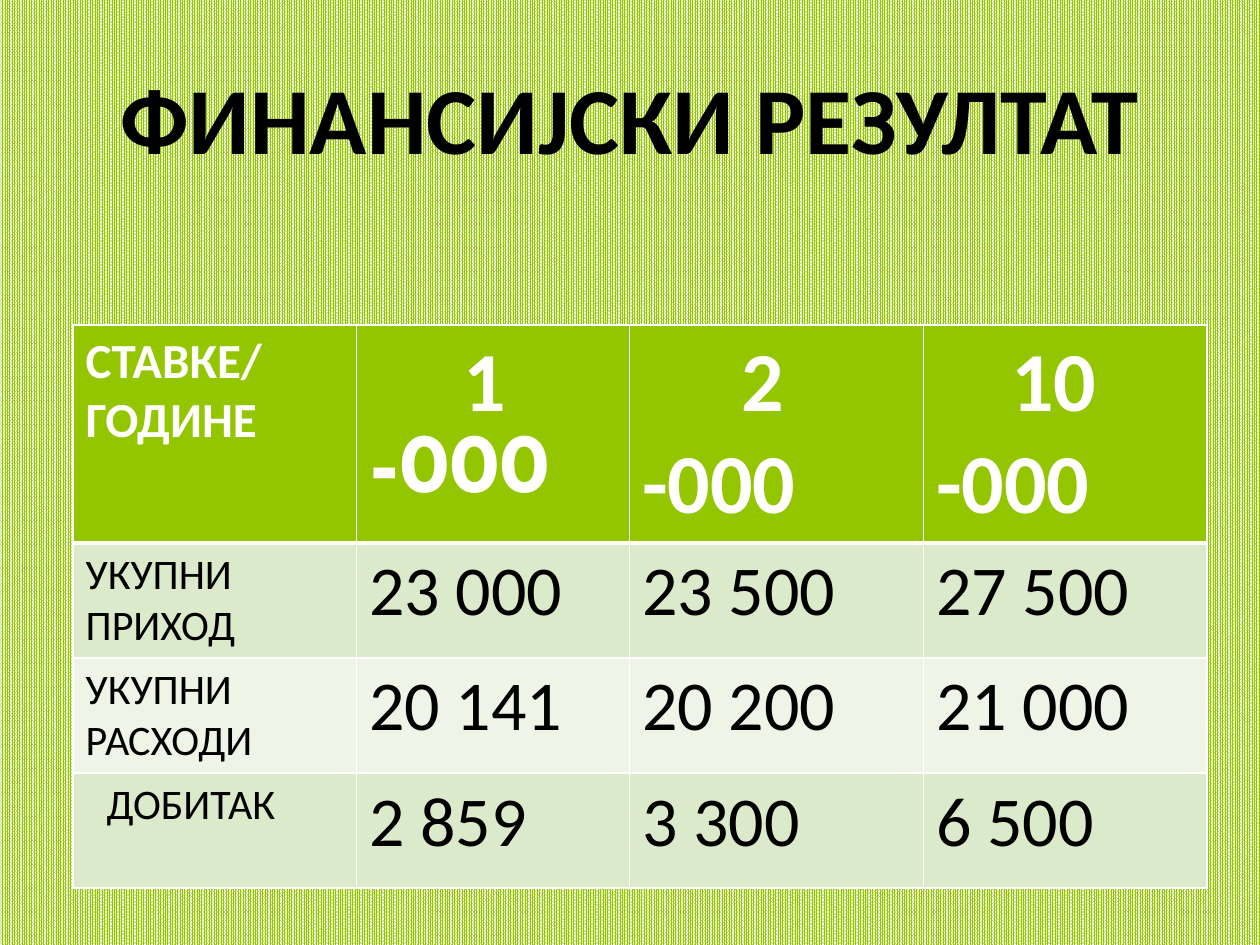
from dataclasses import dataclass

from lxml import etree
from pptx import Presentation
from pptx.dml.color import RGBColor
from pptx.enum.dml import MSO_PATTERN
from pptx.enum.text import MSO_ANCHOR, PP_ALIGN
from pptx.oxml.ns import qn
from pptx.util import Pt

PERCENT_90 = MSO_PATTERN.PERCENT_90
MIDDLE = MSO_ANCHOR.MIDDLE
LEFT, CENTER = PP_ALIGN.LEFT, PP_ALIGN.CENTER


@dataclass(frozen=True)
class Theme:
    """Colours, fonts and type sizes of the slide."""
    green: str = "94C600"
    white: str = "FFFFFF"
    black: str = "000000"
    bands: tuple = ("DCEACC", "EEF5E7")
    font: str = "Calibri"
    accent_font: str = "League Spartan"
    title_size: int = 54
    year_size: int = 48
    value_size: int = 40
    heading_size: int = 28
    label_size: int = 24


THEME = Theme()
COLUMN_WIDTHS = (162, 156, 168, 162)
ROW_HEIGHTS = (124.5, 65.5, 65.5, 65.5)
YEARS = (("1", 54, THEME.accent_font), ("2", 57, THEME.font), ("10", 43, THEME.font))
ITEMS = (
    (("УКУПНИ", "ПРИХОД"), 0, ("23 000", "23 500", "27 500")),
    (("УКУПНИ", "РАСХОДИ"), 0, ("20 141", "20 200", "21 000")),
    (("ДОБИТАК",), 12, ("2 859", "3 300", "6 500")),
)


def write_text(paragraph, text, *, size, color=THEME.black, bold=False,
               font=THEME.font, align=LEFT, indent=0):
    """Write one formatted run into a paragraph."""
    paragraph.alignment = align
    if indent:
        paragraph._p.get_or_add_pPr().set("marL", str(Pt(indent)))
    run = paragraph.add_run()
    run.text = text
    run.font.name = font
    run.font.size = Pt(size)
    run.font.bold = bold
    run.font.color.rgb = RGBColor.from_string(color)


def write_lines(cell, lines, **text_format):
    """Write each line as a paragraph of a cell."""
    frame = cell.text_frame
    for index, line in enumerate(lines):
        paragraph = frame.add_paragraph() if index else frame.paragraphs[0]
        write_text(paragraph, line, **text_format)


def style_cell(cell, color, top=1, bottom=1):
    """Fill a cell and give it white borders."""
    cell.fill.solid()
    cell.fill.fore_color.rgb = RGBColor.from_string(color)
    properties = cell._tc.get_or_add_tcPr()
    widths = {"a:lnL": 1, "a:lnR": 1, "a:lnT": top, "a:lnB": bottom}
    for position, (tag, width) in enumerate(widths.items()):
        line = etree.Element(qn(tag), w=str(Pt(width)))
        fill = etree.SubElement(line, qn("a:solidFill"))
        etree.SubElement(fill, qn("a:srgbClr"), val=THEME.white)
        properties.insert(position, line)


def set_background(slide):
    """Give the slide its dense green pattern."""
    fill = slide.background.fill
    fill.patterned()
    fill.pattern = PERCENT_90
    fill.fore_color.rgb = RGBColor.from_string(THEME.green)
    fill.back_color.rgb = RGBColor.from_string(THEME.white)


def add_title(slide, text):
    """Place and fill the title placeholder."""
    title = slide.shapes.title
    title.left, title.top, title.width, title.height = Pt(36), Pt(21.6), Pt(648), Pt(90)
    title.text_frame.vertical_anchor = MIDDLE
    write_text(title.text_frame.paragraphs[0], text, size=THEME.title_size,
               bold=True, align=CENTER)


def fill_header(table):
    """Fill the row of years."""
    heading = {"color": THEME.white, "bold": True}
    write_lines(table.cell(0, 0), ("СТАВКЕ/", "ГОДИНЕ"), size=THEME.heading_size, **heading)
    for column, (year, indent, unit_font) in enumerate(YEARS, 1):
        frame = table.cell(0, column).text_frame
        write_text(frame.paragraphs[0], year, size=THEME.year_size, indent=indent, **heading)
        write_text(frame.add_paragraph(), "-000", size=THEME.year_size,
                   font=unit_font, **heading)
    for column in range(len(COLUMN_WIDTHS)):
        style_cell(table.cell(0, column), THEME.green, bottom=3)


def fill_item(table, row, label, indent, values):
    """Fill one row with its label and yearly values."""
    write_lines(table.cell(row, 0), label, size=THEME.label_size, indent=indent)
    for column, value in enumerate(values, 1):
        write_lines(table.cell(row, column), (value,), size=THEME.value_size)
    for column in range(len(COLUMN_WIDTHS)):
        style_cell(table.cell(row, column), THEME.bands[(row - 1) % 2],
                   top=3 if row == 1 else 1)


def add_result_table(slide):
    """Add the table of financial results."""
    frame = slide.shapes.add_table(
        len(ROW_HEIGHTS), len(COLUMN_WIDTHS), Pt(41.76), Pt(185.76),
        Pt(sum(COLUMN_WIDTHS)), Pt(sum(ROW_HEIGHTS)))
    table = frame.table
    table.first_row = table.horz_banding = False
    for column, width in zip(table.columns, COLUMN_WIDTHS):
        column.width = Pt(width)
    for row, height in zip(table.rows, ROW_HEIGHTS):
        row.height = Pt(height)
    fill_header(table)
    for row, item in enumerate(ITEMS, 1):
        fill_item(table, row, *item)


def main():
    """Build and save the presentation."""
    presentation = Presentation()
    presentation.slide_width, presentation.slide_height = Pt(720), Pt(540)
    slide = presentation.slides.add_slide(presentation.slide_layouts[5])
    set_background(slide)
    add_title(slide, "ФИНАНСИЈСКИ РЕЗУЛТАТ")
    add_result_table(slide)
    presentation.save("out.pptx")


if __name__ == "__main__":
    main()
